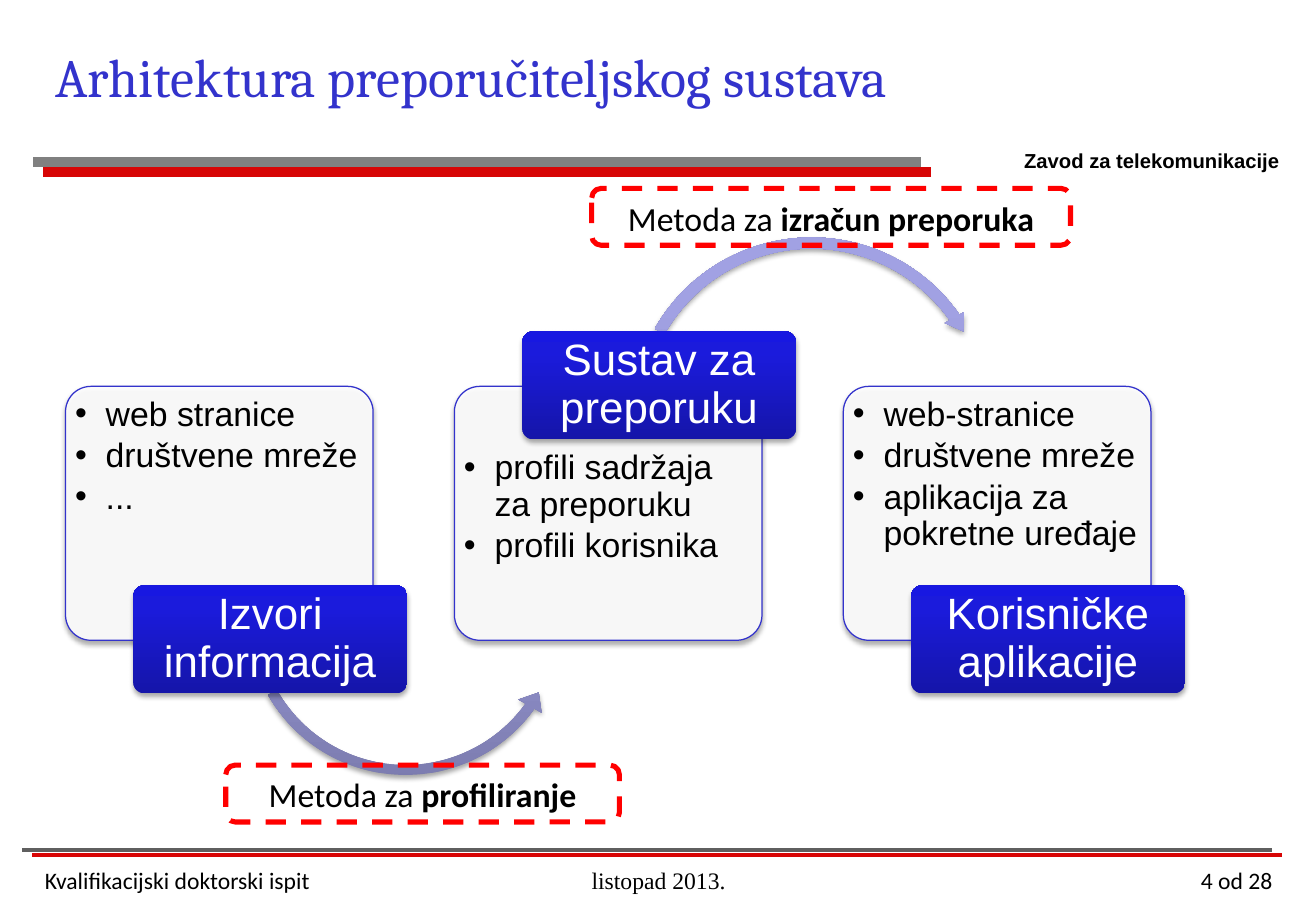
"""Builds the slide on the architecture of a recommender system."""
from copy import deepcopy
from dataclasses import dataclass

from lxml.etree import SubElement
from pptx import Presentation
from pptx.dml.color import RGBColor
from pptx.enum.dml import MSO_LINE
from pptx.enum.shapes import MSO_CONNECTOR, MSO_SHAPE
from pptx.enum.text import MSO_ANCHOR, PP_ALIGN
from pptx.oxml.ns import qn
from pptx.util import Cm, Pt


@dataclass(frozen=True)
class Theme:
    black: str = "000000"
    white: str = "FFFFFF"
    blue: str = "3333CC"
    red: str = "FF0000"
    rule_red: str = "D70505"
    header_gray: str = "808080"
    footer_gray: str = "5F5F5F"
    button_gradient: tuple = ("1515A9", "1B1BDC", "1818E1")
    arrow_gradient: tuple = ("7C7CAF", "A1A1E3", "A0A0E5")
    title_size: int = 32
    button_size: int = 26
    body_size: int = 20
    footer_size: int = 14
    department_size: int = 12


theme = Theme()


def write_text(shape, lines, *, size, font="Arial", color=theme.black, bold=False,
               align=PP_ALIGN.LEFT, anchor=MSO_ANCHOR.TOP, inset=(0.25, 0.13),
               spacing=1.0, after=0, bullet=False):
    """Fill a shape with paragraphs; parts after the first in a line are bold."""
    frame = shape.text_frame
    frame.word_wrap = True
    frame.vertical_anchor = anchor
    frame.margin_left = frame.margin_right = Cm(inset[0])
    frame.margin_top = frame.margin_bottom = Cm(inset[1])
    for number, parts in enumerate(lines):
        para = frame.add_paragraph() if number else frame.paragraphs[0]
        if bullet:
            properties = para._p.get_or_add_pPr()
            properties.set("marL", str(Cm(0.64)))
            properties.set("indent", str(-Cm(0.64)))
            SubElement(properties, qn("a:buFont"), typeface="Arial")
            SubElement(properties, qn("a:buChar"), char="•")
        para.alignment = align
        para.line_spacing = spacing
        para.space_after = Pt(after)
        for position, part in enumerate(parts):
            span = para.add_run()
            span.text = part
            span.font.name = font
            span.font.size = Pt(size)
            span.font.bold = bold or position > 0
            span.font.color.rgb = RGBColor.from_string(color)


def cast_shadow(shape, color=theme.black, opacity=35, blur=3.1, distance=1.8, angle=90):
    """Give a finished shape or line an outer shadow."""
    effects = SubElement(shape._element.spPr, qn("a:effectLst"))
    shadow = SubElement(effects, qn("a:outerShdw"), blurRad=str(Pt(blur)),
                        dist=str(Pt(distance)), dir=str(angle * 60000),
                        algn="ctr", rotWithShape="0")
    tint = SubElement(shadow, qn("a:srgbClr"), val=color)
    SubElement(tint, qn("a:alpha"), val=str(opacity * 1000))


deck = Presentation()
deck.slide_width, deck.slide_height = Cm(27.51), Cm(19.05)
page = deck.slides.add_slide(deck.slide_layouts[6])

rules = [
    (19.25, 0.69, 3.38, theme.header_gray, 6, 8.5, 45),
    (26.59, 0.46, 17.78, theme.footer_gray, 2.25, 6.7, 27),
]
for start, end, top, color, width, distance, angle in rules:
    rule = page.shapes.add_connector(MSO_CONNECTOR.STRAIGHT, Cm(start), Cm(top), Cm(end), Cm(top))
    rule.line.color.rgb = RGBColor.from_string(color)
    rule.line.width = Pt(width)
    cast_shadow(rule, theme.rule_red, 100, 0, distance, angle)

footer = {"size": theme.footer_size, "font": "Calibri"}
captions = [
    ("Zavod za telekomunikacije", (21.16, 2.97, 6.35, 0.76),
     {"size": theme.department_size, "bold": True}),
    ("Arhitektura preporučiteljskog sustava", (0.91, 0, 23.39, 3.18),
     {"size": theme.title_size, "font": "Cambria", "color": theme.blue,
      "anchor": MSO_ANCHOR.MIDDLE}),
    ("listopad 2013.", (10.9, 17.98, 5.74, 1.07),
     footer | {"font": "Times New Roman", "align": PP_ALIGN.CENTER}),
    ("Kvalifikacijski doktorski ispit", (0.69, 17.98, 8.71, 1.07), footer),
    ("4 od 28", (21.11, 17.98, 5.74, 1.07), footer | {"align": PP_ALIGN.RIGHT}),
]
for text, place, style in captions:
    box = page.shapes.add_textbox(*map(Cm, place))
    write_text(box, [[text]], **style)

left_arrow = (MSO_SHAPE.LEFT_CIRCULAR_ARROW, (5, 9.42, 6.96, 6.96),
              (0.03, 3.65, 21.41, 90.25, 0.04), theme.arrow_gradient)
right_arrow = (MSO_SHAPE.CIRCULAR_ARROW, (13.08, 4.85, 7.77, 7.77),
               (0.03, 3.24, 195, 125.76, 0.03), theme.arrow_gradient)
stages = [
    ("Izvori informacija", ["web stranice", "društvene mreže", "..."],
     8.2, 12.24, [left_arrow]),
    ("Sustav za preporuku", ["profili sadržaja za preporuku", "profili korisnika"],
     9.32, 6.93, [right_arrow]),
    ("Korisničke aplikacije",
     ["web-stranice", "društvene mreže", "aplikacija za pokretne uređaje"],
     8.2, 12.24, []),
]
for column, (name, items, list_top, button_top, arrows) in enumerate(stages):
    left = 1.37 + column * 8.13
    card = page.shapes.add_shape(MSO_SHAPE.ROUNDED_RECTANGLE,
                                 Cm(left), Cm(8.08), Cm(6.43), Cm(5.31))
    card.adjustments[0] = 0.1
    card.fill.solid()
    card.fill.fore_color.rgb = RGBColor.from_string(theme.white)
    SubElement(card._element.spPr.find(".//" + qn("a:srgbClr")), qn("a:alpha"), val="90000")
    card.line.color.rgb = RGBColor.from_string(theme.blue)
    card.line.width = Pt(0.75)
    cast_shadow(card)

    box = page.shapes.add_textbox(Cm(left + 0.1), Cm(list_top), Cm(6.22), Cm(3.91))
    write_text(box, [[item] for item in items], size=theme.body_size,
               inset=(0.1, 0.1), spacing=0.9, after=3, bullet=True)

    button = (MSO_SHAPE.ROUNDED_RECTANGLE, (left + 1.42, button_top, 5.72, 2.26),
              (0.1,), theme.button_gradient)
    for kind, place, adjustments, colors in arrows + [button]:
        shape = page.shapes.add_shape(kind, *map(Cm, place))
        for index, value in enumerate(adjustments):
            shape.adjustments[index] = value
        shape.fill.gradient()
        shape.fill.gradient_angle = 90
        stop_list = shape._element.spPr.find(".//" + qn("a:gsLst"))
        stop_list.append(deepcopy(stop_list[0]))
        for stop, position, color in zip(shape.fill.gradient_stops, (0, 0.8, 1), colors):
            stop.position = position
            stop.color.rgb = RGBColor.from_string(color)
        shape.line.fill.background()
        cast_shadow(shape)
    write_text(shape, [[name]], size=theme.button_size, color=theme.white,
               align=PP_ALIGN.CENTER, anchor=MSO_ANCHOR.MIDDLE,
               inset=(0.13, 0.1), spacing=0.9)

methods = [
    (" profiliranje", (4.72, 16, 8.23, 1.19)),
    (" izračun preporuka", (12.37, 3.94, 10.01, 1.19)),
]
for method, place in methods:
    frame_box = page.shapes.add_shape(MSO_SHAPE.ROUNDED_RECTANGLE, *map(Cm, place))
    frame_box.shadow.inherit = False
    frame_box.fill.background()
    frame_box.line.color.rgb = RGBColor.from_string(theme.red)
    frame_box.line.width = Pt(3)
    frame_box.line.dash_style = MSO_LINE.DASH
    write_text(frame_box, [["Metoda za", method]], size=theme.body_size,
               font="Calibri", align=PP_ALIGN.CENTER)

deck.save("out.pptx")
